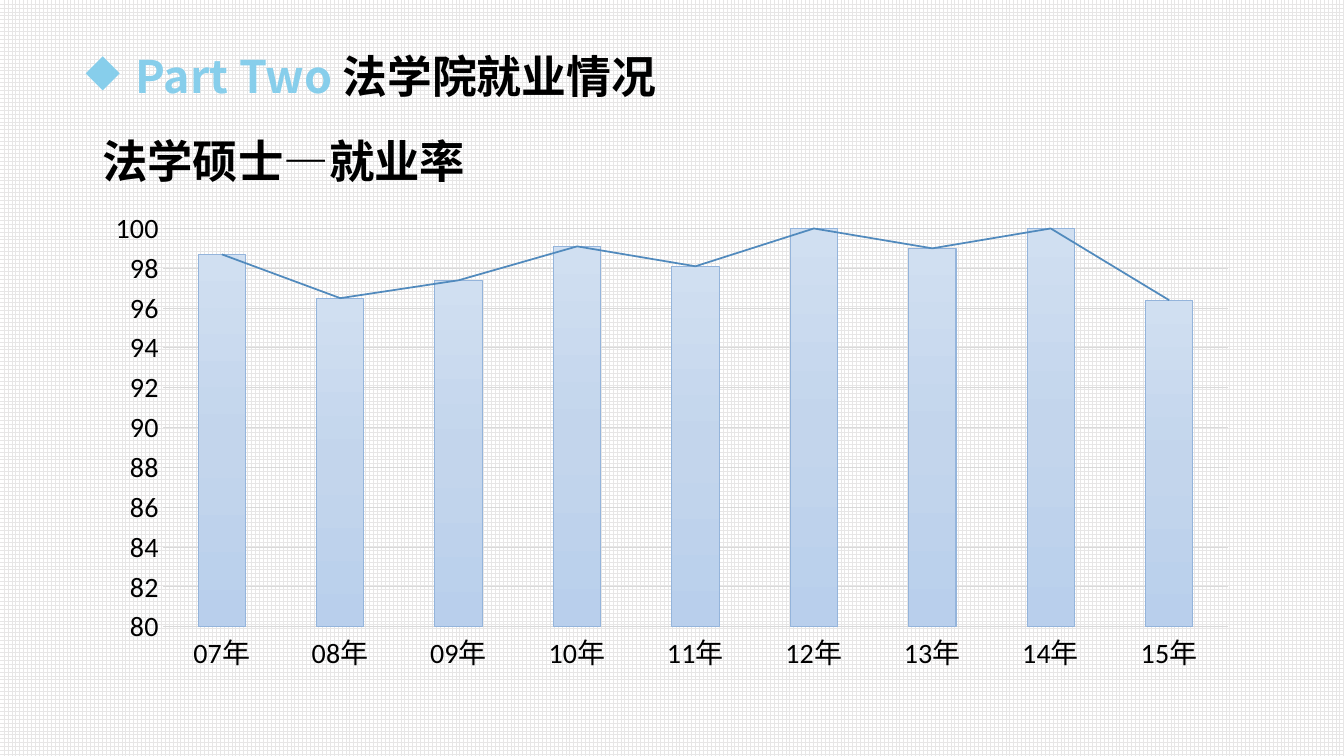
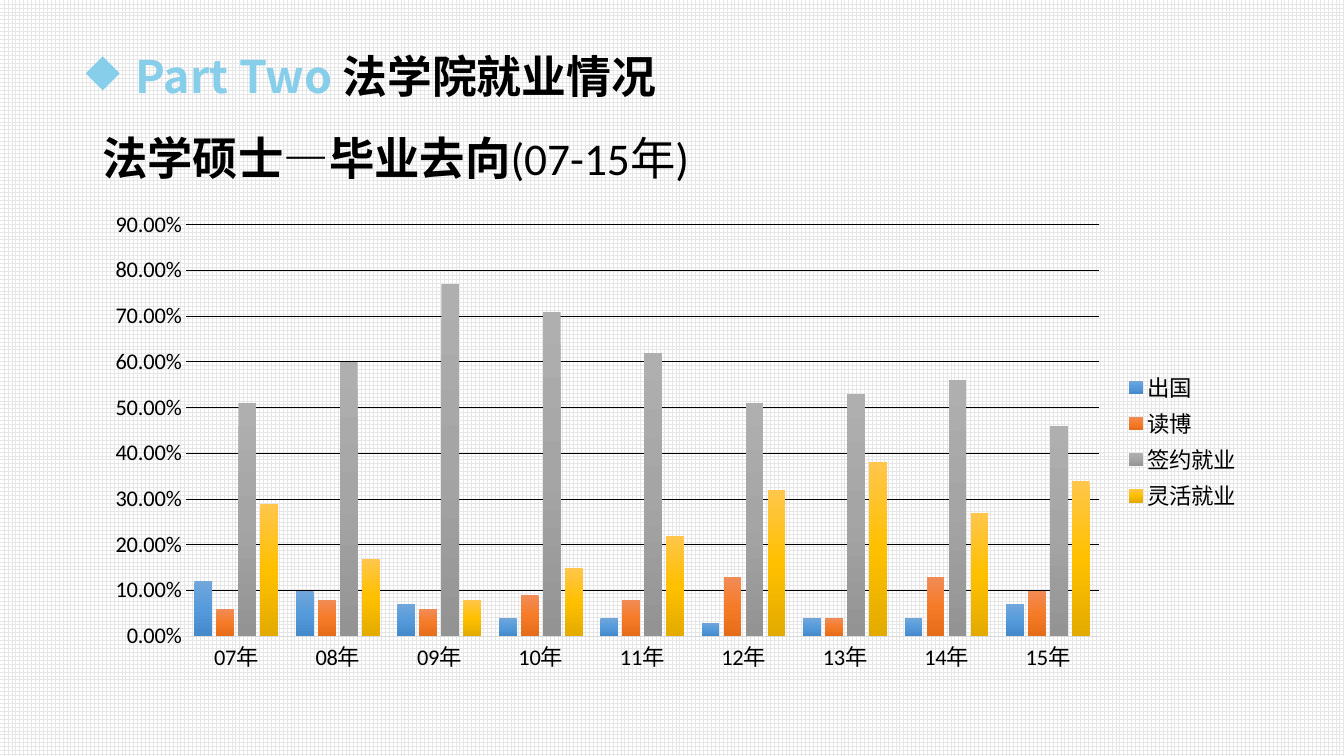
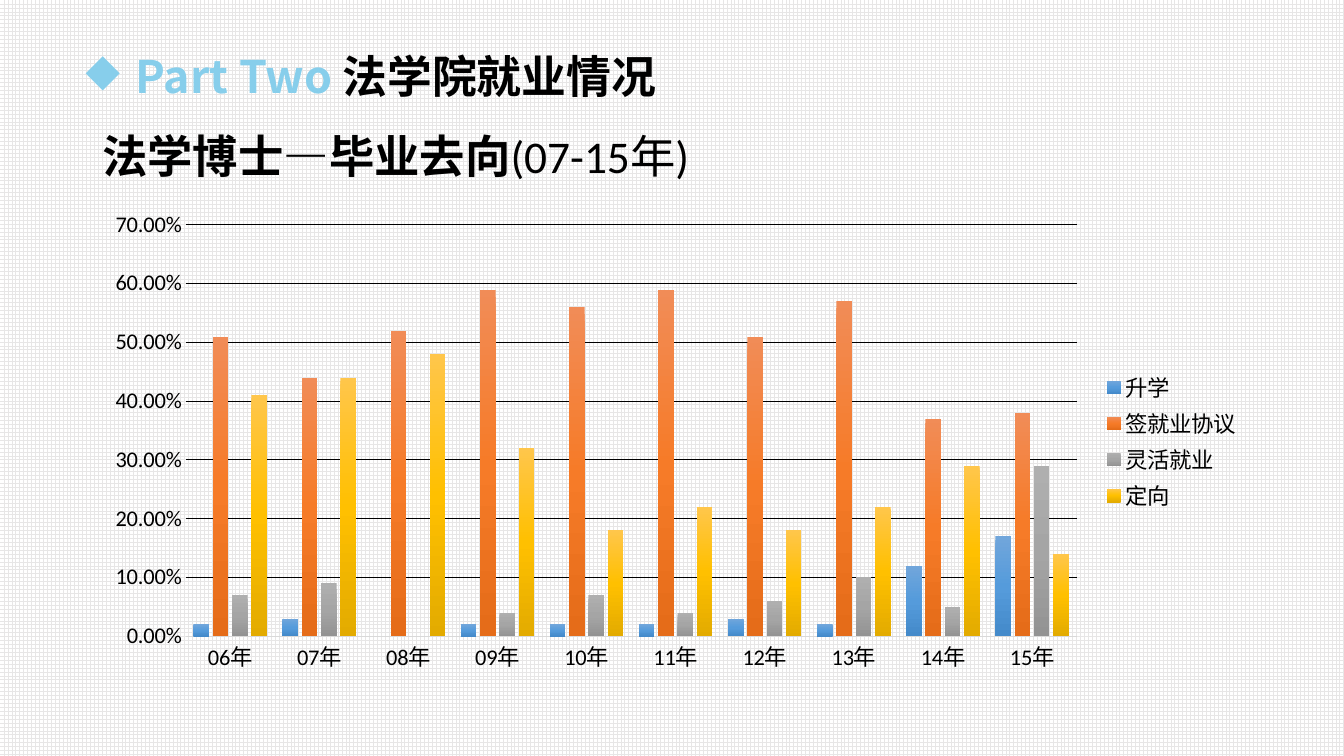
"""Builds three slides on law school employment, each with a heading and a chart."""
from pptx import Presentation
from pptx.chart.data import CategoryChartData
from pptx.dml.color import RGBColor
from pptx.enum import chart as charts, dml, text
from pptx.oxml import parse_xml
from pptx.oxml.ns import nsdecls, qn
from pptx.util import Pt
import copy

BLACK = RGBColor(0x00, 0x00, 0x00)
WHITE = RGBColor(0xFF, 0xFF, 0xFF)
SKY = RGBColor(0x87, 0xCE, 0xEB)
PAPER_GRID = RGBColor(0xE7, 0xE6, 0xE6)
PALE_GRAY = RGBColor(0xD9, 0xD9, 0xD9)
BAR_EDGE = RGBColor(0x94, 0xB4, 0xDB)
TREND_BLUE = RGBColor(0x51, 0x8A, 0xBD)


def shades(*codes):
    """Turn hex codes into a tuple of colours."""
    return tuple(RGBColor.from_string(code) for code in codes)


PALE_BLUE = shades("D0DFF1", "C3D5EC", "B9CFEC")
SERIES_SHADES = (
    shades("71A6DB", "559BDB", "448ACA"),
    shades("F18C57", "F67B28", "E56C19"),
    shades("AFAFAF", "A5A5A5", "939393"),
    shades("FFC64B", "FFC000", "E3AB00"),
)

HEADING_FONT = "Noto Sans CJK SC"
BODY_FONT = "Calibri"
PART, PART_TITLE = "Part Two ", "法学院就业情况"
MARGIN, CONTENT_WIDTH = 66, 828
HEADING_BOTTOM, CHART_TOP, CHART_HEIGHT = 133.2, 144, 342.7

RATES = (98.7, 96.5, 97.4, 99.1, 98.1, 100, 99, 100, 96.4)
SLIDES = [
    {
        "heading": "法学硕士—就业率", "period": "", "heading_height": 32.4,
        "first_year": 7, "scale": (80, 100, 2), "format": "General",
        "size": 20, "gap": 150, "overlap": 0, "grid": PALE_GRAY, "axis_width": 0.75,
        "series": {"Series 1": RATES, "Series 2": RATES}, "trend": True,
    },
    {
        "heading": "法学硕士—毕业去向", "period": "(07-15年)", "heading_height": 37.4,
        "first_year": 7, "scale": (0, 0.9, 0.1), "format": "0.00%",
        "size": 16, "gap": 100, "overlap": -24, "grid": BLACK, "axis_width": 1,
        "series": {
            "出国": (0.12, 0.1, 0.07, 0.04, 0.04, 0.03, 0.04, 0.04, 0.07),
            "读博": (0.06, 0.08, 0.06, 0.09, 0.08, 0.13, 0.04, 0.13, 0.1),
            "签约就业": (0.51, 0.6, 0.77, 0.71, 0.62, 0.51, 0.53, 0.56, 0.46),
            "灵活就业": (0.29, 0.17, 0.08, 0.15, 0.22, 0.32, 0.38, 0.27, 0.34),
        }, "trend": False,
    },
    {
        "heading": "法学博士—毕业去向", "period": "(07-15年)", "heading_height": 39.6,
        "first_year": 6, "scale": (0, 0.7, 0.1), "format": "0.00%",
        "size": 16, "gap": 100, "overlap": -24, "grid": BLACK, "axis_width": 1,
        "series": {
            "升学": (0.02, 0.03, 0, 0.02, 0.02, 0.02, 0.03, 0.02, 0.12, 0.17),
            "签就业协议": (0.51, 0.44, 0.52, 0.59, 0.56, 0.59, 0.51, 0.57, 0.37, 0.38),
            "灵活就业": (0.07, 0.09, 0, 0.04, 0.07, 0.04, 0.06, 0.1, 0.05, 0.29),
            "定向": (0.41, 0.44, 0.48, 0.32, 0.18, 0.22, 0.18, 0.22, 0.29, 0.14),
        }, "trend": False,
    },
]


def add_text(slide, left, top, width, height, runs):
    """Add a one-paragraph text box from (text, size, font, colour, bold) runs."""
    box = slide.shapes.add_textbox(Pt(left), Pt(top), Pt(width), Pt(height))
    box.text_frame.word_wrap = True
    paragraph = box.text_frame.paragraphs[0]
    for words, size, font, color, bold in runs:
        run = paragraph.add_run()
        run.text = words
        run.font.size, run.font.name, run.font.bold = Pt(size), font, bold
        run.font.color.rgb = color
        run.font._element.find(qn("a:latin")).addnext(
            parse_xml(f'<a:ea {nsdecls("a")} typeface="{HEADING_FONT}"/>'))
    return box.text_frame, paragraph


def add_part_title(slide):
    """Add the bulleted part title shared by all slides."""
    frame, paragraph = add_text(slide, 54, 31, 671, 46, [
        (PART, 32, HEADING_FONT, SKY, True),
        (PART_TITLE, 32, HEADING_FONT, BLACK, True)])
    frame.auto_size = text.MSO_AUTO_SIZE.SHAPE_TO_FIT_TEXT
    properties = paragraph._element.get_or_add_pPr()
    properties.set("marL", str(Pt(36)))
    properties.set("indent", str(-Pt(36)))
    properties.append(parse_xml(f'<a:buChar {nsdecls("a")} char="◆"/>'))


def add_heading(slide, content):
    """Add the chart heading, whose lower edge is the same on every slide."""
    height = content["heading_height"]
    runs = [(content["heading"], 32.4, HEADING_FONT, BLACK, True)]
    if content["period"]:
        runs.append((content["period"], 32.4, BODY_FONT, BLACK, False))
    frame, paragraph = add_text(
        slide, MARGIN, HEADING_BOTTOM - height, CONTENT_WIDTH, height, runs)
    frame.vertical_anchor = text.MSO_ANCHOR.MIDDLE
    paragraph.line_spacing = 0.9


def fill_gradient(fill, series, colors):
    """Give a series a three-stop gradient from top to bottom."""
    fill.gradient()
    fill.gradient_angle = 270
    stop_list = series._element.find(".//" + qn("a:gsLst"))
    stop_list.append(copy.deepcopy(stop_list[-1]))
    for stop, position, color in zip(fill.gradient_stops, (0, 0.5, 1), colors):
        stop.position = position
        stop.color.rgb = color


def style_line(line, color, width):
    """Set the colour and width of a line."""
    line.color.rgb = color
    line.width = Pt(width)


def draw_last_series_as_line(chart):
    """Move the last column series to a line plot on the same axes."""
    bars = chart.plots[0]._element
    series = bars.findall(qn("c:ser"))[-1]
    line_plot = parse_xml(
        f'<c:lineChart {nsdecls("c")}><c:grouping val="standard"/>'
        '<c:varyColors val="0"/><c:marker val="1"/></c:lineChart>')
    for bar_setting in series.findall(qn("c:invertIfNegative")):
        series.remove(bar_setting)
    line_plot.insert(2, series)
    for axis_id in bars.findall(qn("c:axId")):
        line_plot.append(copy.deepcopy(axis_id))
    bars.addnext(line_plot)
    trend = chart.plots[1].series[0]
    trend.smooth = False
    trend.marker.style = charts.XL_MARKER_STYLE.NONE
    style_line(trend.format.line, TREND_BLUE, 1.25)


def style_axes(chart, content):
    """Format both axes and the gridlines."""
    category, value = chart.category_axis, chart.value_axis
    for axis in (category, value):
        axis.major_tick_mark = axis.minor_tick_mark = charts.XL_TICK_MARK.NONE
        axis.tick_labels.font.size = Pt(content["size"])
        axis.tick_labels.font.name = BODY_FONT
        axis.tick_labels.font.color.rgb = BLACK
    style_line(category.format.line, PALE_GRAY, content["axis_width"])
    value.format.line.fill.background()
    value.minimum_scale, value.maximum_scale, value.major_unit = content["scale"]
    value.tick_labels.number_format = content["format"]
    value.tick_labels.number_format_is_linked = False
    style_line(value.major_gridlines.format.line, content["grid"], 0.75)


def add_column_chart(slide, content):
    """Add the slide's column chart."""
    data = CategoryChartData(number_format=content["format"])
    data.categories = [f"{year:02}年" for year in range(content["first_year"], 16)]
    for name, values in content["series"].items():
        data.add_series(name, values)
    chart = slide.shapes.add_chart(
        charts.XL_CHART_TYPE.COLUMN_CLUSTERED, Pt(MARGIN), Pt(CHART_TOP),
        Pt(CONTENT_WIDTH), Pt(CHART_HEIGHT), data).chart
    chart.has_title = False
    chart.font.size, chart.font.name = Pt(content["size"]), BODY_FONT
    chart.font.color.rgb = BLACK
    style_axes(chart, content)

    plot = chart.plots[0]
    plot.vary_by_categories = False
    plot.gap_width, plot.overlap = content["gap"], content["overlap"]
    chart.has_legend = not content["trend"]
    if content["trend"]:
        draw_last_series_as_line(chart)
        style_line(plot.series[0].format.line, BAR_EDGE, 0.75)
    else:
        chart.legend.position = charts.XL_LEGEND_POSITION.RIGHT
        chart.legend.include_in_layout = False
        chart.legend.font.size, chart.legend.font.name = Pt(content["size"]), BODY_FONT
        chart.legend.font.color.rgb = BLACK
    palette = (PALE_BLUE,) if content["trend"] else SERIES_SHADES
    for series, colors in zip(plot.series, palette):
        fill_gradient(series.format.fill, series, colors)


def main():
    """Build and save the presentation."""
    presentation = Presentation()
    presentation.slide_width, presentation.slide_height = Pt(960), Pt(540)
    paper = presentation.slide_master.background.fill
    paper.patterned()
    paper.pattern = dml.MSO_PATTERN.LARGE_GRID
    paper.fore_color.rgb, paper.back_color.rgb = PAPER_GRID, WHITE
    for content in SLIDES:
        slide = presentation.slides.add_slide(presentation.slide_layouts[6])
        add_heading(slide, content)
        add_column_chart(slide, content)
        add_part_title(slide)
    presentation.save("out.pptx")


if __name__ == "__main__":
    main()
